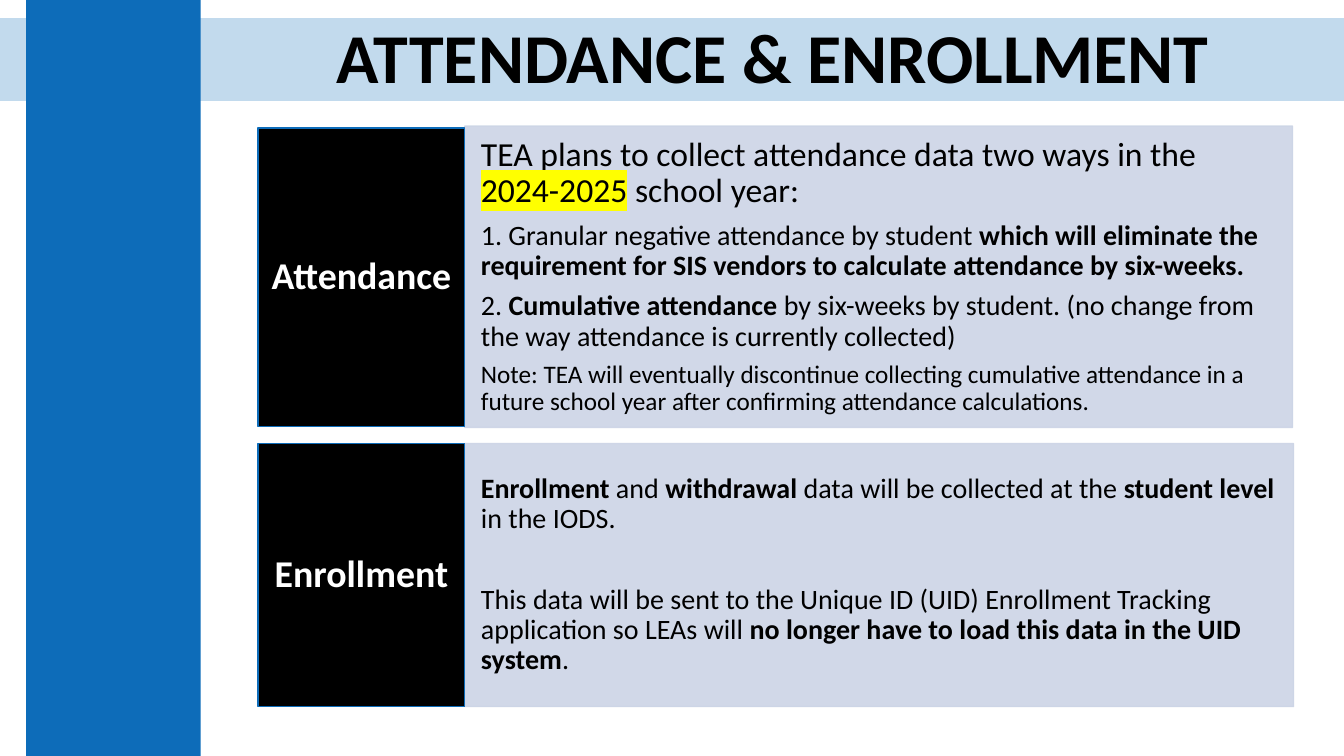
import pptx
import pptx.util
import pptx.dml.color
import pptx.enum.shapes
import pptx.enum.text
import pptx.oxml
import pptx.oxml.ns

Inches, Pt = pptx.util.Inches, pptx.util.Pt
ALIGN = pptx.enum.text.PP_ALIGN
BLUE, PALE, BLACK, WHITE, YELLOW = "0D6CB9", "CCD4E6", "000000", "FFFFFF", "FFFF00"


def tint(code):
    return pptx.dml.color.RGBColor.from_string(code)


def apply(item, values):
    for name, value in values.items():
        setattr(item, name, value)


def fade(fill, share):
    """Make a solid fill see-through; share is the opacity in percent."""
    color = fill._xPr.find(".//" + pptx.oxml.ns.qn("a:srgbClr"))
    color.append(pptx.oxml.parse_xml(
        f'<a:alpha {pptx.oxml.ns.nsdecls("a")} val="{share * 1000}"/>'))


class Page:
    font = "Calibri"

    def __init__(self, deck):
        self.slide = deck.slides.add_slide(deck.slide_layouts[5])

    def box(self, place, color, edge=None, solid=100):
        shape = self.slide.shapes.add_shape(
            pptx.enum.shapes.MSO_SHAPE.RECTANGLE, *map(Inches, place))
        shape.shadow.inherit = False
        shape.fill.solid()
        shape.fill.fore_color.rgb = tint(color)
        if edge:
            shape.line.color.rgb = tint(edge)
            shape.line.width = Pt(1)
        else:
            shape.line.fill.background()
        if solid < 100:
            fade(shape.fill, solid)
            if edge:
                fade(shape.line.fill, solid)
        return shape

    def frame(self, shape, side, rise):
        apply(shape.text_frame, {
            "word_wrap": True,
            "auto_size": pptx.enum.text.MSO_AUTO_SIZE.NONE,
            "vertical_anchor": pptx.enum.text.MSO_ANCHOR.MIDDLE,
            "margin_left": Inches(side), "margin_right": Inches(side),
            "margin_top": Inches(rise), "margin_bottom": Inches(rise)})
        return shape.text_frame

    def line(self, para, runs, size, color, align=ALIGN.LEFT, after=0):
        """Fill a paragraph; each run is a text and a mark: b bold, h highlight."""
        apply(para, {"alignment": align, "line_spacing": 0.9,
                     "space_before": Pt(0), "space_after": Pt(after)})
        for text, mark in runs:
            run = para.add_run()
            run.text = text
            apply(run.font, {"name": self.font, "size": Pt(size), "bold": mark == "b"})
            run.font.color.rgb = tint(color)
            if mark == "h":
                glow = pptx.oxml.parse_xml(
                    f'<a:highlight {pptx.oxml.ns.nsdecls("a")}>'
                    f'<a:srgbClr val="{YELLOW}"/></a:highlight>')
                run.font._element.find(pptx.oxml.ns.qn("a:latin")).addprevious(glow)

    def title(self, place, text):
        shape = self.slide.shapes.title
        apply(shape, dict(zip(("left", "top", "width", "height"), map(Inches, place))))
        frame = self.frame(shape, 0.1, 0.05)
        self.line(frame.paragraphs[0], [(text, "b")], 50, BLACK, ALIGN.CENTER)
        self.slide.shapes._spTree.append(shape._element)

    def label(self, place, text):
        frame = self.frame(self.box(place, BLACK, BLUE), 0.11, 0.26)
        self.line(frame.paragraphs[0], [(text, "b")], 27, WHITE, ALIGN.CENTER, 9.45)

    def panel(self, place, lines):
        frame = self.frame(self.box(place, PALE, PALE, 90), 0.16, 0.05)
        for index, (size, after, runs) in enumerate(lines):
            para = frame.add_paragraph() if index else frame.paragraphs[0]
            self.line(para, runs, size, BLACK, after=after)


def main():
    deck = pptx.Presentation()
    deck.slide_width, deck.slide_height = Inches(13.33), Inches(7.5)
    page = Page(deck)

    # Backdrop and title
    page.box((0, 0.18, 13.33, 0.82), BLUE, solid=25)
    page.box((0.26, 0, 1.73, 7.5), BLUE)
    page.title((2.01, 0.24, 11.32, 0.73), "ATTENDANCE & ENROLLMENT")

    # Attendance row
    page.panel((4.61, 1.25, 8.21, 2.99), [
        (24, 8.4, [("TEA plans to collect attendance data two ways in the ", ""),
                   ("2024-2025", "h"), (" school year:", "")]),
        (20, 7, [("1. Granular negative attendance by student ", ""),
                 ("which will eliminate the requirement for SIS vendors "
                  "to calculate attendance by six-weeks.", "b")]),
        (20, 7, [("2. ", ""), ("Cumulative attendance ", "b"),
                 ("by six-weeks by student. (no change from the way "
                  "attendance is currently collected)", "")]),
        (18, 6.3, [("Note: TEA will eventually discontinue collecting cumulative "
                    "attendance in a future school year after confirming "
                    "attendance calculations.", "")])])
    page.label((2.56, 1.27, 2.05, 2.96), "Attendance")

    # Enrollment row
    page.panel((4.61, 4.4, 8.22, 2.61), [
        (20, 36, [("Enrollment", "b"), (" and ", ""), ("withdrawal", "b"),
                  (" data will be collected at the ", ""),
                  ("student level ", "b"), ("in the IODS.", "")]),
        (20, 7, [("This data will be sent to the Unique ID (UID) Enrollment "
                  "Tracking application so LEAs will ", ""),
                 ("no longer have to load this data in the UID system", "b"),
                 (".", "")])])
    page.label((2.56, 4.4, 2.05, 2.61), "Enrollment")

    deck.save("out.pptx")


if __name__ == "__main__":
    main()
